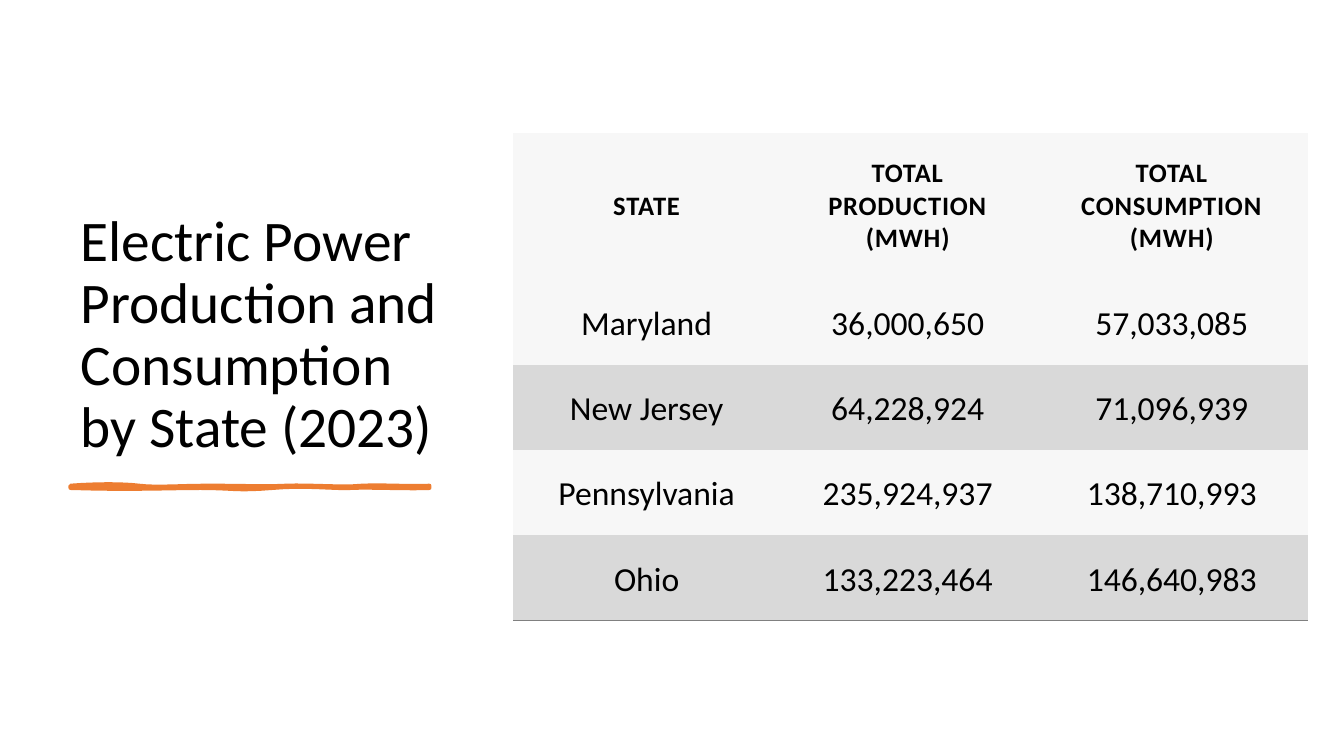
"""Build a slide with a title, a brushed underline and a state power table."""
from lxml import etree
from pptx import Presentation
from pptx import util as u
from pptx.dml.color import RGBColor
from pptx.enum import text
from pptx.oxml import ns

Pt = u.Pt
BLACK = RGBColor(0x00, 0x00, 0x00)
ORANGE = RGBColor(0xED, 0x7D, 0x31)
LIGHT = RGBColor(0xF7, 0xF7, 0xF7)
MID = RGBColor(0xD9, 0xD9, 0xD9)
GREY = RGBColor(0x80, 0x80, 0x80)
FONT = "Calibri"
NO_STYLE = "{2D5ABB26-0587-4C30-8999-92F81FD0307C}"

ROWS = [
    ("STATE", "TOTAL PRODUCTION (MWH)", "TOTAL CONSUMPTION (MWH)"),
    ("Maryland", "36,000,650", "57,033,085"),
    ("New Jersey", "64,228,924", "71,096,939"),
    ("Pennsylvania", "235,924,937", "138,710,993"),
    ("Ohio", "133,223,464", "146,640,983"),
]
COL_WIDTHS = (190.8, 182.2, 195.1)
HEADER_HEIGHT, ROW_HEIGHT = 104.4, 61

STROKE_START = (50.4, 347)
STROKE_CURVES = [
    ((69.8, 345.6), (87.1, 345.6), (99.4, 347)),
    ((111.6, 348.5), (127.4, 347), (150.5, 347)),
    ((173.5, 347), (187.2, 347.8), (204.5, 347)),
    ((221.8, 346.3), (244.1, 348.5), (258.5, 347)),
    ((272.9, 346.3), (296.6, 347.8), (306.7, 347)),
    ((306.7, 347.8), (306.7, 348.5), (306.7, 348.5)),
    ((293.8, 349.2), (262.1, 347.8), (250.6, 348.5)),
    ((239, 349.2), (218.9, 346.3), (194.4, 348.5)),
    ((169.2, 350.6), (166.3, 348.5), (143.3, 348.5)),
    ((119.5, 348.5), (95, 349.9), (50.4, 348.5)),
]


def apply(obj, fmt):
    """Set every attribute named in a dict of format values."""
    for name, value in fmt.items():
        setattr(obj, name, value)


def set_text(tf, content, align, font, spacing=0):
    """Write one paragraph and format it; return the paragraph."""
    p = tf.paragraphs[0]
    p.alignment = align
    r = p.add_run()
    r.text = content
    apply(r.font, {"name": FONT, **font})
    r.font.color.rgb = BLACK
    if spacing:
        r.font._element.set("spc", str(spacing))
    return p


def add_title(s, content):
    """Place and format the title placeholder."""
    sp = s.shapes.title
    apply(sp, {"left": Pt(50.4), "top": Pt(50.4), "width": Pt(281.5), "height": Pt(281.5)})
    apply(sp.text_frame, {"word_wrap": True, "auto_size": text.MSO_AUTO_SIZE.NONE,
                          "vertical_anchor": text.MSO_ANCHOR.BOTTOM})
    p = set_text(sp.text_frame, content, text.PP_ALIGN.LEFT, {"size": Pt(41)})
    p.line_spacing = 0.9


def curve_points(start, curves, steps=8):
    """Sample chained cubic curves as a list of points."""
    points = []
    for a, b, end in curves:
        for t in (i / steps for i in range(1, steps + 1)):
            weights = ((1 - t) ** 3, 3 * t * (1 - t) ** 2, 3 * t * t * (1 - t), t ** 3)
            points.append(tuple(
                Pt(sum(w * q[axis] for w, q in zip(weights, (start, a, b, end))))
                for axis in (0, 1)))
        start = end
    return points


def add_stroke(s, start, curves):
    """Draw the brushed underline."""
    fb = s.shapes.build_freeform(*(Pt(v) for v in start))
    fb.add_line_segments(curve_points(start, curves), close=True)
    sp = fb.convert_to_shape()
    sp.shadow.inherit = False
    sp.fill.solid()
    sp.fill.fore_color.rgb = ORANGE
    sp.line.color.rgb = ORANGE
    sp.line.width = Pt(3)


def add_bottom_border(cell):
    """Give a cell a thin grey bottom border."""
    ln = etree.Element(ns.qn("a:lnB"), w=str(Pt(1)))
    fill = etree.SubElement(ln, ns.qn("a:solidFill"))
    etree.SubElement(fill, ns.qn("a:srgbClr"), val=str(GREY))
    cell._tc.get_or_add_tcPr().insert(0, ln)


def format_cell(cell, content, row):
    """Fill a cell and format it for its row."""
    header = row == 0
    side, bottom = (16.6, 16.6) if header else (17.3, 10.8)
    anchor = text.MSO_ANCHOR.MIDDLE if header else text.MSO_ANCHOR.TOP
    apply(cell, {"margin_left": Pt(side), "margin_right": Pt(side), "margin_top": Pt(side),
                 "margin_bottom": Pt(bottom), "vertical_anchor": anchor})
    cell.fill.solid()
    cell.fill.fore_color.rgb = MID if row and row % 2 == 0 else LIGHT
    set_text(cell.text_frame, content, text.PP_ALIGN.CENTER,
             {"size": Pt(19 if header else 24), "bold": header}, 60 if header else 0)


def add_power_table(s, rows):
    """Add the table of production and consumption."""
    height = HEADER_HEIGHT + ROW_HEIGHT * (len(rows) - 1)
    tbl = s.shapes.add_table(len(rows), len(COL_WIDTHS), Pt(366.5), Pt(95),
                             Pt(sum(COL_WIDTHS)), Pt(height)).table
    tbl._tbl.tblPr[0].text = NO_STYLE
    tbl.horz_banding = False
    for col, width in zip(tbl.columns, COL_WIDTHS):
        col.width = Pt(width)
    for i, values in enumerate(rows):
        tbl.rows[i].height = Pt(ROW_HEIGHT if i else HEADER_HEIGHT)
        for j, value in enumerate(values):
            format_cell(tbl.cell(i, j), value, i)
    for cell in tbl.rows[len(rows) - 1].cells:
        add_bottom_border(cell)


def main():
    """Build and save the slide."""
    prs = Presentation()
    apply(prs, {"slide_width": Pt(960), "slide_height": Pt(540)})
    s = prs.slides.add_slide(prs.slide_layouts[5])
    add_title(s, "Electric Power Production and Consumption by State (2023)")
    add_stroke(s, STROKE_START, STROKE_CURVES)
    add_power_table(s, ROWS)
    prs.save("out.pptx")


if __name__ == "__main__":
    main()
